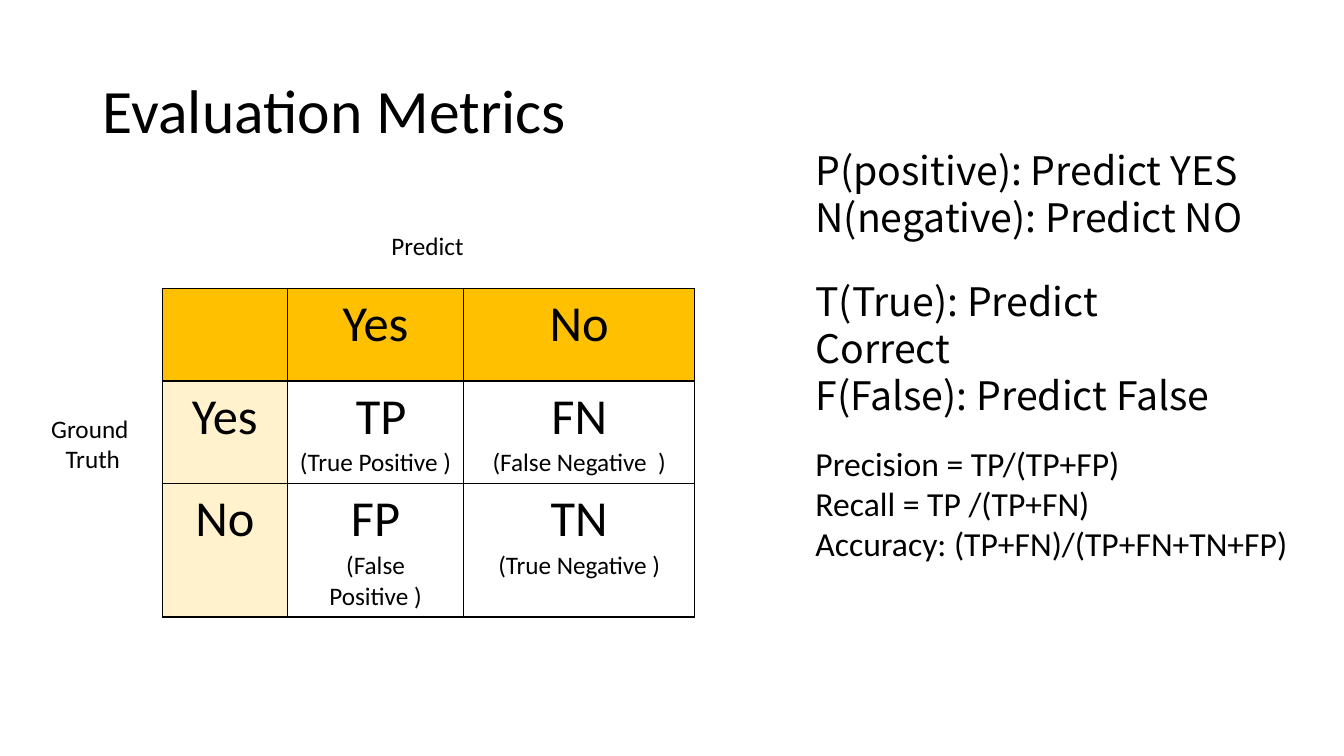
from dataclasses import dataclass

from lxml import etree
from pptx import Presentation
from pptx import util as u
from pptx.dml.color import RGBColor
from pptx.enum import text
from pptx.oxml import ns


@dataclass(frozen=True)
class Theme:
    body_font: str = "Calibri"
    note_font: str = "Noto Sans CJK TC"
    ink: str = "000000"
    header_fill: str = "FFC000"
    side_fill: str = "FFF2CC"
    cell_fill: str = "FFFFFF"
    title_size: int = 44
    cell_size: int = 36
    note_size: int = 28
    formula_size: int = 24
    label_size: int = 18
    border: float = 1


class SlideBuilder:
    def __init__(self, presentation, theme):
        self.theme = theme
        self.slide = presentation.slides.add_slide(presentation.slide_layouts[5])

    def fill_text(self, frame, lines, sizes, font=None, align=None):
        """Fill a text frame with one paragraph per line, each with its own size."""
        for index, (line, size) in enumerate(zip(lines, sizes)):
            paragraph = frame.paragraphs[0] if index == 0 else frame.add_paragraph()
            paragraph.text = line
            paragraph.alignment = align
            paragraph.font.name = font or self.theme.body_font
            paragraph.font.size = u.Pt(size)
            paragraph.font.color.rgb = RGBColor.from_string(self.theme.ink)

    def title(self, words, box):
        title = self.slide.shapes.title
        title.left, title.top, title.width, title.height = map(u.Inches, box)
        title.text_frame.vertical_anchor = text.MSO_ANCHOR.MIDDLE
        self.fill_text(title.text_frame, [words], [self.theme.title_size],
                       align=text.PP_ALIGN.LEFT)
        title.text_frame.paragraphs[0].line_spacing = 0.9

    def text_box(self, lines, box, size, font=None, align=None, wrap=False):
        frame = self.slide.shapes.add_textbox(*map(u.Inches, box)).text_frame
        frame.word_wrap = wrap
        frame.auto_size = text.MSO_AUTO_SIZE.SHAPE_TO_FIT_TEXT
        self.fill_text(frame, lines, [size] * len(lines), font, align)

    def draw_borders(self, cell):
        properties = cell._tc.get_or_add_tcPr()
        for position, side in enumerate(("lnL", "lnR", "lnT", "lnB")):
            line = etree.Element(ns.qn(f"a:{side}"), w=str(u.Pt(self.theme.border)))
            fill = etree.SubElement(line, ns.qn("a:solidFill"))
            etree.SubElement(fill, ns.qn("a:srgbClr"), val=self.theme.ink)
            properties.insert(position, line)

    def matrix(self, rows, left, top, widths, heights):
        """Add a table whose cells hold a main line and an optional explanation."""
        theme = self.theme
        table = self.slide.shapes.add_table(
            len(rows), len(widths), u.Inches(left), u.Inches(top),
            u.Inches(sum(widths)), u.Inches(sum(heights))).table
        for column, width in zip(table.columns, widths):
            column.width = u.Inches(width)
        for row, height in zip(table.rows, heights):
            row.height = u.Inches(height)
        table.first_row = table.horz_banding = False
        for row_index, row in enumerate(rows):
            for column_index, lines in enumerate(row):
                cell = table.cell(row_index, column_index)
                color = (theme.header_fill if row_index == 0 else
                         theme.side_fill if column_index == 0 else theme.cell_fill)
                cell.fill.solid()
                cell.fill.fore_color.rgb = RGBColor.from_string(color)
                self.fill_text(cell.text_frame, lines, (theme.cell_size, theme.label_size),
                               align=text.PP_ALIGN.CENTER)
                self.draw_borders(cell)


def main():
    presentation = Presentation()
    presentation.slide_width = u.Inches(13.33)
    presentation.slide_height = u.Inches(7.5)
    theme = Theme()
    builder = SlideBuilder(presentation, theme)
    center = text.PP_ALIGN.CENTER

    builder.title("Evaluation Metrics", (0.92, 0.4, 11.5, 1.45))
    builder.matrix(
        [[[], ["Yes"], ["No"]],
         [["Yes"], [" TP", "(True Positive )"], ["FN", "(False Negative  )"]],
         [["No"], ["FP", "(False Positive )"], ["TN", "(True Negative )"]]],
        1.61, 2.86, widths=(1.24, 1.75, 2.29), heights=(0.92, 1.02, 0.92))

    builder.text_box(["Precision = TP/(TP+FP)", "Recall = TP /(TP+FN)",
                      "Accuracy: (TP+FN)/(TP+FN+TN+FP)"],
                     (7.99, 4.34, 4.93, 1.31), theme.formula_size)
    builder.text_box(["Ground ", "Truth"], (0.4, 4.05, 1.04, 0.71),
                     theme.label_size, align=center)
    builder.text_box(["Predict"], (3.78, 2.24, 0.92, 0.4), theme.label_size, align=center)
    builder.text_box(["P(positive): Predict YES", "N(negative): Predict NO"],
                     (7.99, 1.4, 4.56, 1.04), theme.note_size, theme.note_font)
    builder.text_box(["T(True): Predict Correct", "F(False): Predict False"],
                     (7.99, 2.7, 4.39, 1.04), theme.note_size, theme.note_font, wrap=True)
    presentation.save("out.pptx")


if __name__ == "__main__":
    main()
